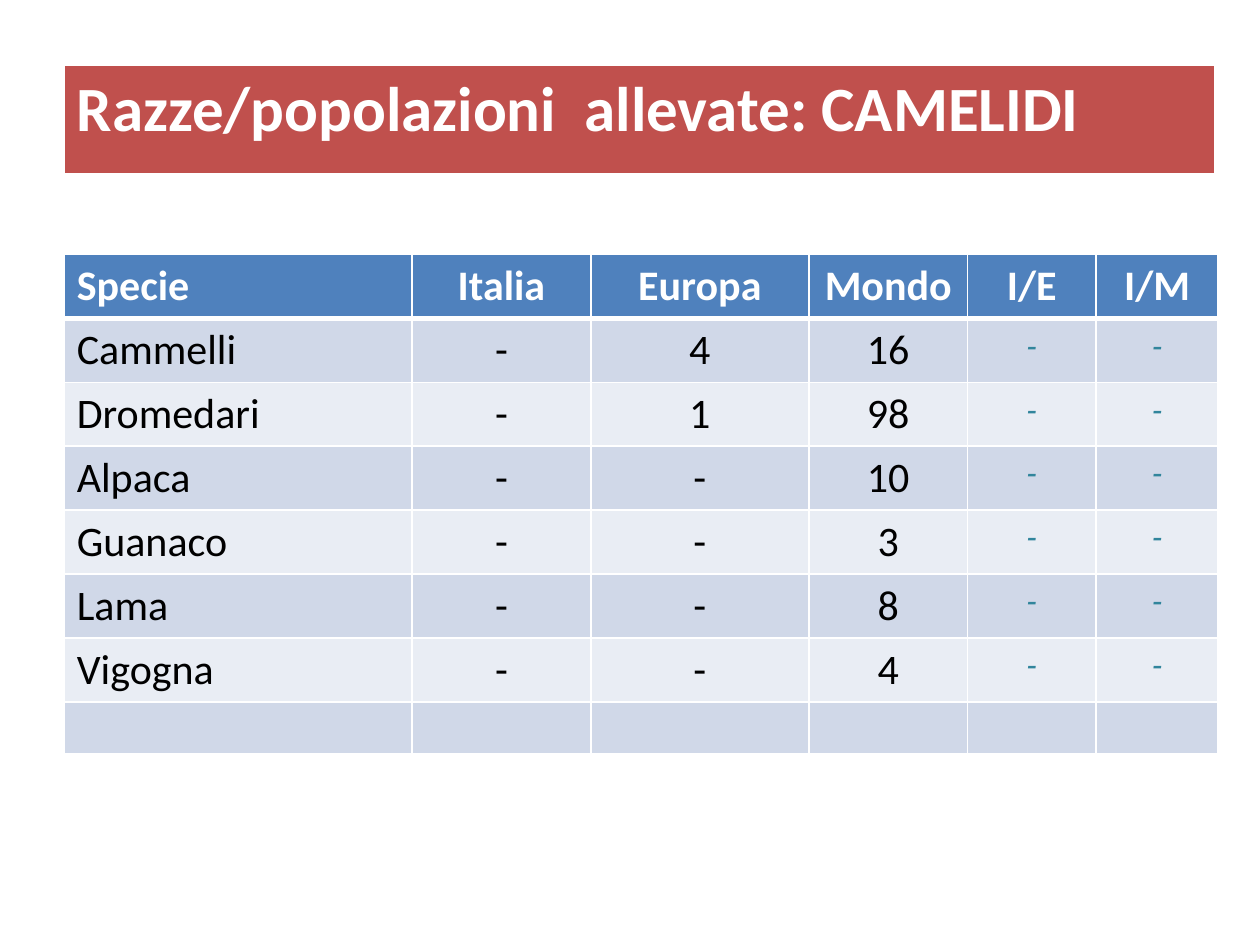
from lxml.etree import SubElement
from pptx import Presentation
from pptx.dml.color import RGBColor
from pptx.enum.text import PP_ALIGN
from pptx.oxml.ns import qn
from pptx.util import Inches, Pt

TITLE = "Razze/popolazioni  allevate: CAMELIDI"
HEADER = ["Specie", "Italia", "Europa", "Mondo", "I/E", "I/M"]
SPECIES = [
    ["Cammelli", "-", "4", "16", "-", "-"],
    ["Dromedari", "-", "1", "98", "-", "-"],
    ["Alpaca", "-", "-", "10", "-", "-"],
    ["Guanaco", "-", "-", "3", "-", "-"],
    ["Lama", "-", "-", "8", "-", "-"],
    ["Vigogna", "-", "-", "4", "-", "-"],
    [""] * 6,
]
COLUMN_WIDTHS = [2.76, 1.42, 1.73, 1.26, 1.02, 0.97]
TEXT_ROW, EMPTY_ROW = 0.5, 0.41
LEFT = 0.51
FIRST_RATIO_COLUMN = HEADER.index("I/E")

WHITE, BLACK, TEAL = "FFFFFF", "000000", "31859C"
RED, BLUE = "C0504D", "4F81BD"
BANDS = ["D0D8E8", "E9EDF4"]


def color(hex_code):
    return RGBColor.from_string(hex_code)


def add_plain_table(slide, top, widths, heights):
    """Add a table with no style options switched on."""
    frame = slide.shapes.add_table(
        len(heights), len(widths), Inches(LEFT), Inches(top),
        Inches(sum(widths)), Inches(sum(heights)))
    table = frame.table
    table.first_row = table.horz_banding = False
    for column, width in zip(table.columns, widths):
        column.width = Inches(width)
    for row, height in zip(table.rows, heights):
        row.height = Inches(height)
    return table


def set_borders(cell, top=1, bottom=1):
    """Draw white borders, with widths in points."""
    properties = cell._tc.get_or_add_tcPr()
    for side, width in (("L", 1), ("R", 1), ("T", top), ("B", bottom)):
        line = SubElement(properties, qn(f"a:ln{side}"), w=str(Pt(width)))
        fill = SubElement(line, qn("a:solidFill"))
        SubElement(fill, qn("a:srgbClr"), val=WHITE)


def fill_cell(cell, text, background, size=24, text_color=BLACK,
              bold=False, italic=False, centered=False, top=1, bottom=1):
    set_borders(cell, top, bottom)
    cell.fill.solid()
    cell.fill.fore_color.rgb = color(background)
    if not text:
        return
    paragraph = cell.text_frame.paragraphs[0]
    paragraph.alignment = PP_ALIGN.CENTER if centered else PP_ALIGN.LEFT
    run = paragraph.add_run()
    run.text = text
    font = run.font
    font.name, font.size = "Calibri", Pt(size)
    font.bold, font.italic = bold, italic
    font.color.rgb = color(text_color)


presentation = Presentation()
presentation.slide_width, presentation.slide_height = Inches(10), Inches(7.5)
slide = presentation.slides.add_slide(presentation.slide_layouts[6])

rows = [HEADER] + SPECIES
heights = [TEXT_ROW if any(row) else EMPTY_ROW for row in rows]
species_table = add_plain_table(slide, 2.02, COLUMN_WIDTHS, heights)
for row_index, row in enumerate(rows):
    for column_index, text in enumerate(row):
        cell = species_table.cell(row_index, column_index)
        centered = column_index > 0
        if row_index == 0:
            fill_cell(cell, text, BLUE, text_color=WHITE, bold=True,
                      centered=centered, bottom=3)
            continue
        ratio = column_index >= FIRST_RATIO_COLUMN
        fill_cell(cell, text, BANDS[(row_index - 1) % 2],
                  size=20 if ratio else 24,
                  text_color=TEAL if ratio else BLACK,
                  italic=ratio, centered=centered,
                  top=3 if row_index == 1 else 1)

title_table = add_plain_table(slide, 0.52, [9.13], [0.87])
fill_cell(title_table.cell(0, 0), TITLE, RED, size=36, text_color=WHITE,
          bold=True, bottom=3)

presentation.save("out.pptx")
